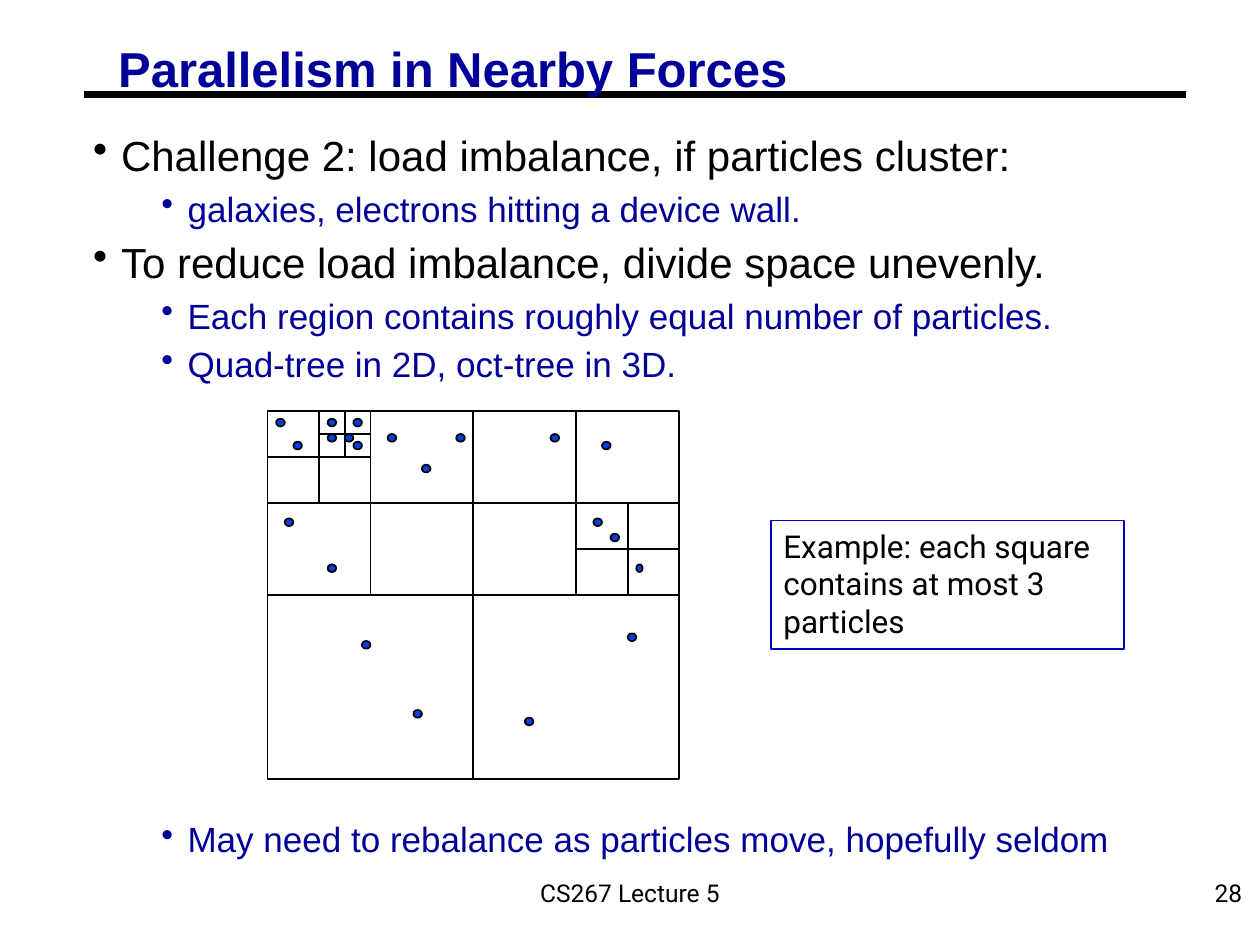
"""Build the slide on parallelism in nearby forces, with its quad-tree diagram."""
from lxml.etree import SubElement
from pptx import Presentation
from pptx.dml.color import RGBColor
from pptx.enum.shapes import MSO_CONNECTOR, MSO_SHAPE
from pptx.enum.text import MSO_ANCHOR as Anchor, PP_ALIGN as Align
from pptx.oxml.ns import qn
from pptx.util import Pt

BLACK = RGBColor(0x00, 0x00, 0x00)
NAVY = RGBColor(0x00, 0x00, 0x99)
BOX_BLUE = RGBColor(0x00, 0x00, 0xCC)
DOT_BLUE = RGBColor(0x06, 0x3D, 0xE8)

TREE_LEFT, TREE_TOP = 152.9, 234.9
UNIT_WIDTH, UNIT_HEIGHT = 4.9, 4.38
TREE_UNITS = 48
HALF_SPLITS = [((0, 24), (48, 24), 1, 3), ((24, 0), (24, 48), 0, 2)]
SPLITS = [
    ((0, 12), (48, 12)), ((12, 0), (12, 24)), ((36, 0), (36, 24)),
    ((6, 0), (6, 12)), ((0, 6), (12, 6)), ((9, 0), (9, 6)),
    ((6, 3), (12, 3)), ((36, 18), (48, 18)), ((42, 12), (42, 24)),
]
PARTICLES = [
    (30, 40), (11, 30), (42, 29), (17, 39), (2, 14), (7, 20), (38, 14),
    (40, 16), (18, 7), (14, 3), (22, 3), (7, 1), (7, 3), (10, 1), (9, 3),
    (10, 4), (1, 1), (3, 4), (33, 3), (39, 4),
]
NARROW_PARTICLE = (43, 20)

BULLETS = [
    (0, "Challenge 2: load imbalance, if particles cluster:", 4.4),
    (1, "galaxies, electrons hitting a device wall.", 3.9),
    (0, "To reduce load imbalance, divide space unevenly.", 4.4),
    (1, "Each region contains roughly equal number of particles.", 3.9),
    (1, "Quad-tree in 2D, oct-tree in 3D.", 3.9),
    (1, "May need to rebalance as particles move, hopefully seldom", 247.3),
]
LEVEL_STYLES = [(24, BLACK, 16, -16), (20, NAVY, 54, -15)]


def add_run(paragraph, text, size, color, font, bold=False):
    """Add one formatted run to a paragraph."""
    run = paragraph.add_run()
    run.text = text
    run.font.size = Pt(size)
    run.font.name = font
    run.font.bold = bold
    run.font.color.rgb = color


def add_text_box(slide, box, margins=(7.2, 3.6), anchor=Anchor.TOP, wrap=True):
    """Add an empty text box and return its text frame."""
    frame = slide.shapes.add_textbox(*map(Pt, box)).text_frame
    frame.word_wrap = wrap
    frame.vertical_anchor = anchor
    frame.margin_left = frame.margin_right = Pt(margins[0])
    frame.margin_top = frame.margin_bottom = Pt(margins[1])
    return frame


def add_footer(slide, text, box, align):
    """Add one footer text."""
    frame = add_text_box(slide, box, anchor=Anchor.MIDDLE, wrap=False)
    paragraph = frame.paragraphs[0]
    paragraph.alignment = align
    add_run(paragraph, text, 14, BLACK, "Roboto")


def add_title(slide, text):
    """Add the slide title."""
    frame = add_text_box(slide, (62.6, 24.5, 579, 33), (5, 2.2))
    paragraph = frame.paragraphs[0]
    paragraph.line_spacing = 0.87
    add_run(paragraph, text, 28, NAVY, "Arial", bold=True)


def add_bullets(slide):
    """Add the two-level bullet list."""
    frame = add_text_box(slide, (48.2, 72, 630, 429), (5, 2.2))
    for index, (level, text, space_before) in enumerate(BULLETS):
        paragraph = frame.add_paragraph() if index else frame.paragraphs[0]
        size, color, margin, indent = LEVEL_STYLES[level]
        paragraph.level = level
        paragraph.space_before = Pt(space_before)
        properties = paragraph._p.get_or_add_pPr()
        properties.set("marL", str(Pt(margin)))
        properties.set("indent", str(Pt(indent)))
        SubElement(properties, qn("a:buChar")).set("char", "•")
        add_run(paragraph, text, size, color, "Arial")


def add_line(shapes, start, end, width=1):
    """Add a black straight line without a shadow."""
    line = shapes.add_connector(MSO_CONNECTOR.STRAIGHT, *map(Pt, start + end))
    line.line.color.rgb = BLACK
    line.line.width = Pt(width)
    SubElement(line._element.spPr, qn("a:effectLst"))
    return line


def add_outline_shape(shapes, kind, box, line_color=BLACK, fill=None):
    """Add a thinly outlined shape, filled only when a colour is given."""
    shape = shapes.add_shape(kind, *map(Pt, box))
    shape.shadow.inherit = False
    shape.line.color.rgb = line_color
    shape.line.width = Pt(1)
    if fill is None:
        shape.fill.background()
    else:
        shape.fill.solid()
        shape.fill.fore_color.rgb = fill
    return shape


def tree_point(position):
    """Turn quad-tree units into slide points."""
    column, row = position
    return TREE_LEFT + column * UNIT_WIDTH, TREE_TOP + row * UNIT_HEIGHT


def add_particle(shapes, position, width=UNIT_WIDTH):
    """Add one particle at a quad-tree position."""
    box = tree_point(position) + (width, UNIT_HEIGHT)
    add_outline_shape(shapes, MSO_SHAPE.OVAL, box, fill=DOT_BLUE)


def add_quad_tree(slide):
    """Add the grouped quad-tree with its splits and particles."""
    shapes = slide.shapes.add_group_shape().shapes
    size = (TREE_UNITS * UNIT_WIDTH, TREE_UNITS * UNIT_HEIGHT)
    region = add_outline_shape(shapes, MSO_SHAPE.RECTANGLE, tree_point((0, 0)) + size)
    for start, end, start_side, end_side in HALF_SPLITS:
        line = add_line(shapes, tree_point(start), tree_point(end))
        line.begin_connect(region, start_side)
        line.end_connect(region, end_side)
    for start, end in SPLITS:
        add_line(shapes, tree_point(start), tree_point(end))
    for position in PARTICLES:
        add_particle(shapes, position)


def add_example(slide, text):
    """Add the framed remark beside the quad-tree."""
    box = (440.6, 297.4, 201.6, 73.4)
    shape = add_outline_shape(slide.shapes, MSO_SHAPE.RECTANGLE, box, BOX_BLUE)
    frame = shape.text_frame
    frame.word_wrap = True
    frame.vertical_anchor = Anchor.TOP
    paragraph = frame.paragraphs[0]
    paragraph.alignment = Align.LEFT
    add_run(paragraph, text, 18, BLACK, "Roboto")


def main():
    """Build and save the presentation."""
    presentation = Presentation()
    presentation.slide_width, presentation.slide_height = Pt(720), Pt(540)
    slide = presentation.slides.add_slide(presentation.slide_layouts[6])
    add_line(slide.shapes, (48, 54), (678, 54), 3.75)
    add_footer(slide, "CS267 Lecture 5", (246, 492, 228, 36), Align.CENTER)
    add_footer(slide, "28", (567, 492, 150, 36), Align.RIGHT)
    add_title(slide, "Parallelism in Nearby Forces")
    add_bullets(slide)
    add_quad_tree(slide)
    add_example(slide, "Example: each square contains at most 3 particles")
    add_particle(slide.shapes, NARROW_PARTICLE, 3.6)
    presentation.save("out.pptx")


if __name__ == "__main__":
    main()
